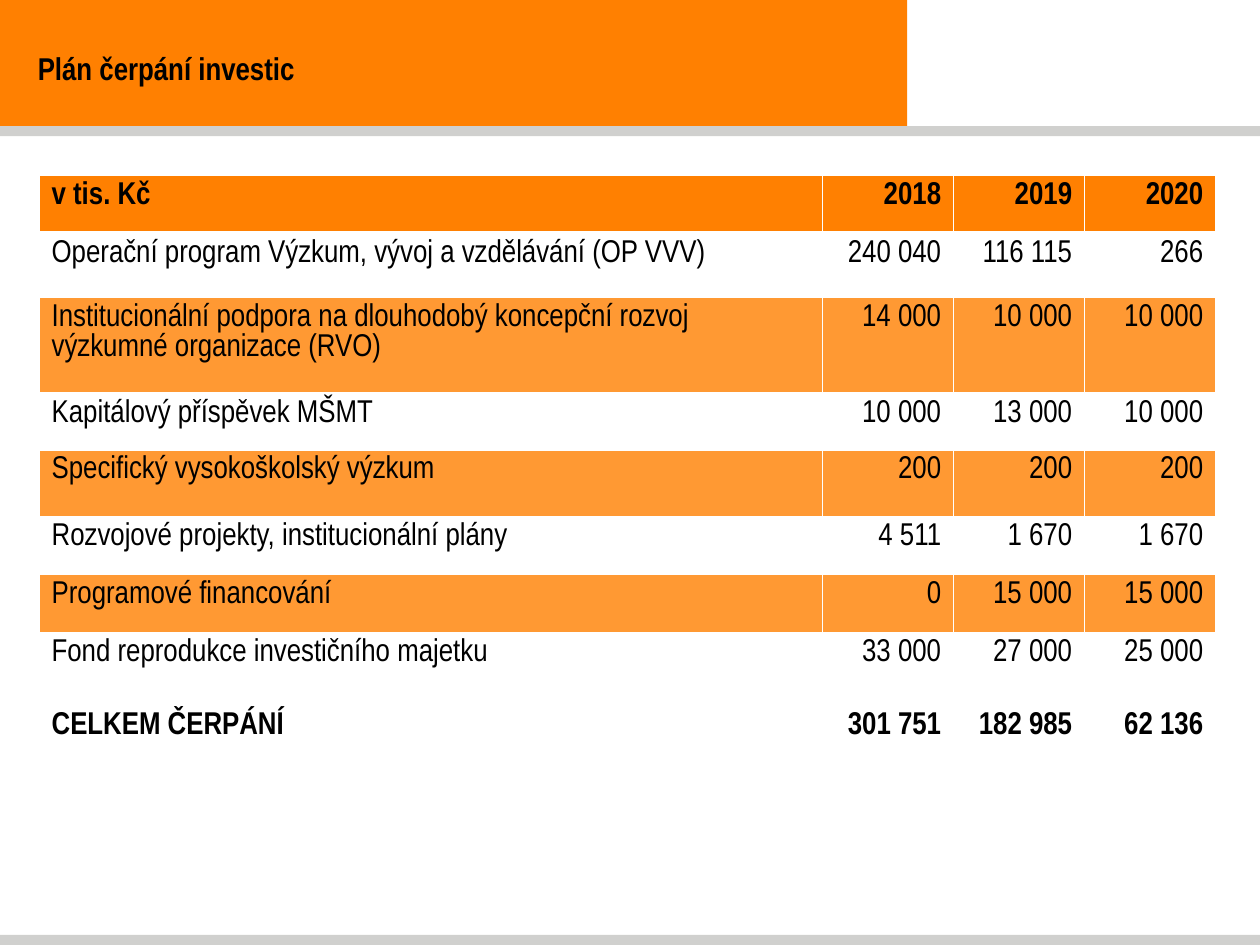
from lxml.etree import SubElement
from pptx import Presentation
from pptx.dml.color import RGBColor
from pptx.enum.shapes import MSO_SHAPE
from pptx.enum.text import MSO_ANCHOR, PP_ALIGN
from pptx.oxml.ns import qn
from pptx.util import Inches, Pt

COLORS = {
    "banner": "FF8001",
    "band": "FF9933",
    "rule": "D0D0CE",
    "paper": "FFFFFF",
    "ink": "000000",
}
GRID_COLUMNS, GRID_ROWS = 100, 75

HEADER = ("v tis. Kč", "2018", "2019", "2020")
INVESTMENTS = [
    ("Operační program Výzkum, vývoj a vzdělávání (OP VVV)", "240 040", "116 115", "266"),
    ("Institucionální podpora na dlouhodobý koncepční rozvoj výzkumné organizace (RVO)",
     "14 000", "10 000", "10 000"),
    ("Kapitálový příspěvek MŠMT", "10 000", "13 000", "10 000"),
    ("Specifický vysokoškolský výzkum", "200", "200", "200"),
    ("Rozvojové projekty, institucionální plány", "4 511", "1 670", "1 670"),
    ("Programové financování", "0", "15 000", "15 000"),
    ("Fond reprodukce investičního majetku", "33 000", "27 000", "25 000"),
]
TOTAL = ("CELKEM ČERPÁNÍ", "301 751", "182 985", "62 136")
COLUMN_WIDTHS = [62.2] + [10.4] * 3
ROW_HEIGHTS = [4.6, 5.1, 7.6, 4.5, 5.3, 4.6, 4.6, 5.8, 5.8]


class SlideBuilder:
    """Places elements by columns and rows of the slide grid."""

    font_name = "Arial Narrow"
    font_size = Pt(18)

    def __init__(self, presentation):
        self.column = presentation.slide_width / GRID_COLUMNS
        self.row = presentation.slide_height / GRID_ROWS
        self.slide = presentation.slides.add_slide(presentation.slide_layouts[6])

    def area(self, left, top, width, height):
        return (round(left * self.column), round(top * self.row),
                round(width * self.column), round(height * self.row))

    def fill(self, target, color):
        target.fill.solid()
        target.fill.fore_color.rgb = RGBColor.from_string(COLORS[color])

    def style_text(self, paragraph, bold, align):
        paragraph.alignment = align
        for run in paragraph.runs:
            run.font.name = self.font_name
            run.font.size = self.font_size
            run.font.bold = bold
            run.font.color.rgb = RGBColor.from_string(COLORS["ink"])

    def bar(self, color, *position):
        bar = self.slide.shapes.add_shape(MSO_SHAPE.RECTANGLE, *self.area(*position))
        bar.shadow.inherit = False
        self.fill(bar, color)
        bar.line.fill.background()

    def title(self, text, *position):
        frame = self.slide.shapes.add_textbox(*self.area(*position)).text_frame
        frame.word_wrap = True
        frame.vertical_anchor = MSO_ANCHOR.MIDDLE
        frame.margin_left = Inches(0.3)
        frame.text = text
        self.style_text(frame.paragraphs[0], True, PP_ALIGN.JUSTIFY)

    def borders(self, cell, bottom_width):
        properties = cell._tc.get_or_add_tcPr()
        widths = {"a:lnL": 1, "a:lnR": 1, "a:lnT": 1, "a:lnB": bottom_width}
        for position, (side, width) in enumerate(widths.items()):
            line = SubElement(properties, qn(side), w=str(Pt(width)))
            SubElement(SubElement(line, qn("a:solidFill")), qn("a:srgbClr"),
                       val=COLORS["paper"])
            properties.insert(position, line)

    def table(self, records, left, top):
        position = self.area(left, top, sum(COLUMN_WIDTHS), sum(ROW_HEIGHTS))
        table = self.slide.shapes.add_table(
            len(records), len(COLUMN_WIDTHS), *position).table
        for column, width in zip(table.columns, COLUMN_WIDTHS):
            column.width = round(width * self.column)
        for row, height in zip(table.rows, ROW_HEIGHTS):
            row.height = round(height * self.row)
        last = len(records) - 1
        for r, record in enumerate(records):
            is_header = r == 0
            banded = r % 2 == 0 and r != last
            color = "banner" if is_header else "band" if banded else "paper"
            for c, value in enumerate(record):
                cell = table.cell(r, c)
                cell.text_frame.text = value
                self.style_text(cell.text_frame.paragraphs[0], r in (0, last),
                                PP_ALIGN.RIGHT if c else PP_ALIGN.LEFT)
                self.fill(cell, color)
                self.borders(cell, 3 if is_header else 1)


def main():
    presentation = Presentation()
    presentation.slide_width, presentation.slide_height = Inches(10), Inches(7.5)
    builder = SlideBuilder(presentation)
    builder.bar("banner", 0, 0, 72, 10)
    for top in (74.2, 10):
        builder.bar("rule", 0, top, GRID_COLUMNS, 0.8)
    builder.table([HEADER, *INVESTMENTS, TOTAL], 3.1, 13.9)
    builder.title("Plán čerpání investic", 0, 3.1, 72, 4.5)
    presentation.save("out.pptx")


if __name__ == "__main__":
    main()
